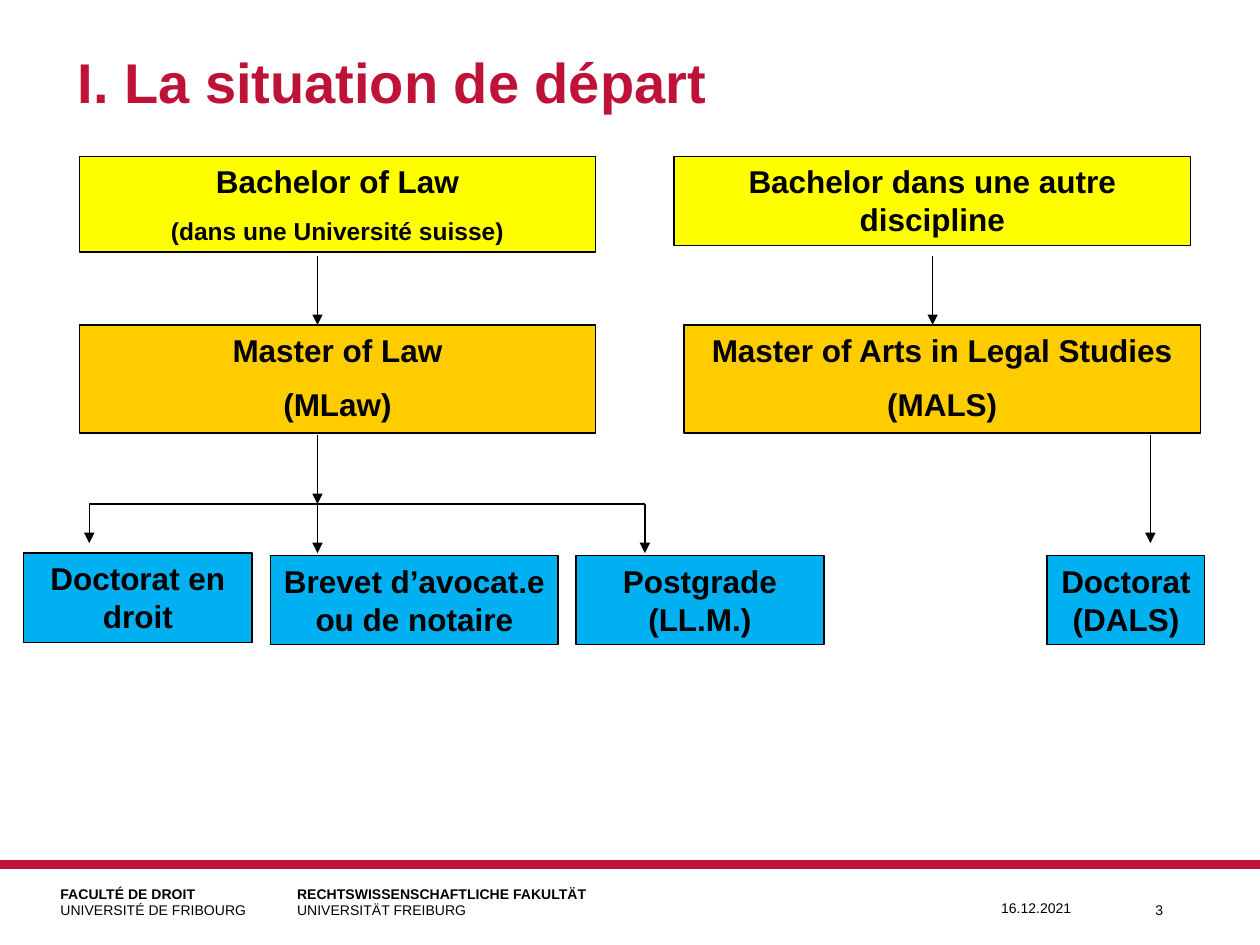
from lxml import etree
from pptx import Presentation
from pptx.dml.color import RGBColor
from pptx.enum import shapes, text
from pptx.oxml.ns import qn
from pptx.util import Cm, Pt

RED = RGBColor(0xBF, 0x12, 0x38)
BLACK = RGBColor(0, 0, 0)
YELLOW = RGBColor(0xFF, 0xFF, 0)
ORANGE = RGBColor(0xFF, 0xCC, 0)
BLUE = RGBColor(0, 0xB0, 0xF0)

FONT = "Arial"
LEFT, CENTER, RIGHT = text.PP_ALIGN.LEFT, text.PP_ALIGN.CENTER, text.PP_ALIGN.RIGHT
TOP, MIDDLE, BOTTOM = text.MSO_ANCHOR.TOP, text.MSO_ANCHOR.MIDDLE, text.MSO_ANCHOR.BOTTOM
STAGE_WIDTH = 10.41
DEGREE_HEIGHT = 1.8
MASTER_TOP, MASTER_HEIGHT = 3.4, 2.18


def add_run(p, words, size, bold=False, color=BLACK):
    r = p.add_run()
    r.text = words
    r.font.name = FONT
    r.font.size = Pt(size)
    r.font.bold = bold
    r.font.color.rgb = color


def add_line(slide, x1, y1, x2, y2, color=BLACK, width=0.75, arrow=False):
    line = slide.shapes.add_connector(
        shapes.MSO_CONNECTOR.STRAIGHT, Cm(x1), Cm(y1), Cm(x2), Cm(y2))
    line.line.color.rgb = color
    line.line.width = Pt(width)
    if arrow:
        etree.SubElement(line.line._get_or_add_ln(), qn("a:tailEnd"), type="triangle")
    etree.SubElement(line._element.spPr, qn("a:effectLst"))


def add_arrow(slide, x, top, bottom):
    add_line(slide, x, top, x, bottom, arrow=True)


def add_text(slide, box, anchor=TOP, align=LEFT, inset=True):
    sp = slide.shapes.add_textbox(*map(Cm, box))
    tf = sp.text_frame
    tf.word_wrap = True
    tf.vertical_anchor = anchor
    if not inset:
        tf.margin_left = tf.margin_top = tf.margin_right = tf.margin_bottom = 0
    p = tf.paragraphs[0]
    p.alignment = align
    return p


def add_degree(slide, box, fill, paragraphs):
    sp = slide.shapes.add_shape(shapes.MSO_SHAPE.RECTANGLE, *map(Cm, box))
    sp.shadow.inherit = False
    sp.fill.solid()
    sp.fill.fore_color.rgb = fill
    sp.line.color.rgb = BLACK
    sp.line.width = Pt(0.75)
    tf = sp.text_frame
    tf.word_wrap = True
    tf.vertical_anchor = TOP
    for i, (words, size) in enumerate(paragraphs):
        p = tf.add_paragraph() if i else tf.paragraphs[0]
        p.alignment = CENTER
        if i:
            p.space_before = Pt(9)
        for j, part in enumerate(words.split("\n")):
            if j:
                p.add_line_break()
            add_run(p, part, size, bold=True)


def add_title(slide, box):
    add_run(add_text(slide, box), "I. La situation de départ", 32, True, RED)


def add_law_path(slide, left, top):
    stage_x, trunk_x = left + 1.12, left + 5.92
    fork_y = top + 7.01
    add_degree(slide, (stage_x, top, STAGE_WIDTH, 1.93), YELLOW,
               [("Bachelor of Law", 18), ("(dans une Université suisse)", 14)])
    add_degree(slide, (stage_x, top + MASTER_TOP, STAGE_WIDTH, MASTER_HEIGHT), ORANGE,
               [("Master of Law", 18), ("(MLaw)", 18)])
    add_arrow(slide, trunk_x, top + 2.01, top + MASTER_TOP)
    add_arrow(slide, trunk_x, top + 5.61, fork_y)
    add_line(slide, left + 1.32, fork_y, left + 12.52, fork_y)
    outcomes = [
        ("Doctorat en droit", 0, 8, 4.6, 1.32, 7.8),
        ("Brevet d’avocat.e ou de notaire", 4.98, 8.05, 5.79, 5.92, 8),
        ("Postgrade\n(LL.M.)", 11.13, 8.05, 5, 12.52, 8),
    ]
    for words, x, y, width, arrow_x, tip in outcomes:
        add_degree(slide, (left + x, top + y, width, DEGREE_HEIGHT), BLUE, [(words, 18)])
        add_arrow(slide, left + arrow_x, fork_y, top + tip)


def add_arts_path(slide, left, top):
    add_degree(slide, (left, top, STAGE_WIDTH, DEGREE_HEIGHT), YELLOW,
               [("Bachelor dans une autre discipline", 18)])
    add_degree(slide, (left + 0.2, top + MASTER_TOP, STAGE_WIDTH, MASTER_HEIGHT), ORANGE,
               [("Master of Arts in Legal Studies", 18), ("(MALS)", 18)])
    add_degree(slide, (left + 7.52, top + 8.05, 3.18, DEGREE_HEIGHT), BLUE,
               [("Doctorat (DALS)", 18)])
    add_arrow(slide, left + 5.21, top + 2.01, top + MASTER_TOP)
    add_arrow(slide, left + 9.6, top + 5.61, top + 7.8)


def add_footer(slide, left, top, width):
    add_line(slide, left, top, left + width, top, RED, 5)
    names = [
        ("FACULTÉ DE DROIT", "UNIVERSITÉ DE FRIBOURG", 1.22, 4.29),
        ("RECHTSWISSENSCHAFTLICHE FAKULTÄT", "UNIVERSITÄT FREIBURG", 5.99, 6.71),
    ]
    for faculty, university, x, name_width in names:
        p = add_text(slide, (left + x, top + 0.2, name_width, 0.9), BOTTOM, inset=False)
        p.line_spacing = Pt(9.6)
        add_run(p, faculty, 8, bold=True)
        p.add_line_break()
        add_run(p, university, 8)
    date = add_text(slide, (left + 18.9, top + 0.59, 2.95, 1.02), align=RIGHT)
    add_run(date, "16.12.2021", 8)
    number = add_text(slide, (left + 22.23, top + 0.41, 1.47, 1.02), MIDDLE, RIGHT)
    add_run(number, "3", 8)


def main():
    prs = Presentation()
    prs.slide_width, prs.slide_height = Cm(25.4), Cm(19.05)
    slide = prs.slides.add_slide(prs.slide_layouts[6])
    add_footer(slide, 0, 17.42, 25.4)
    add_law_path(slide, 0.48, 3.15)
    add_arts_path(slide, 13.59, 3.15)
    add_title(slide, (1.32, 0.84, 20.4, 1.7))
    prs.save("out.pptx")


if __name__ == "__main__":
    main()
